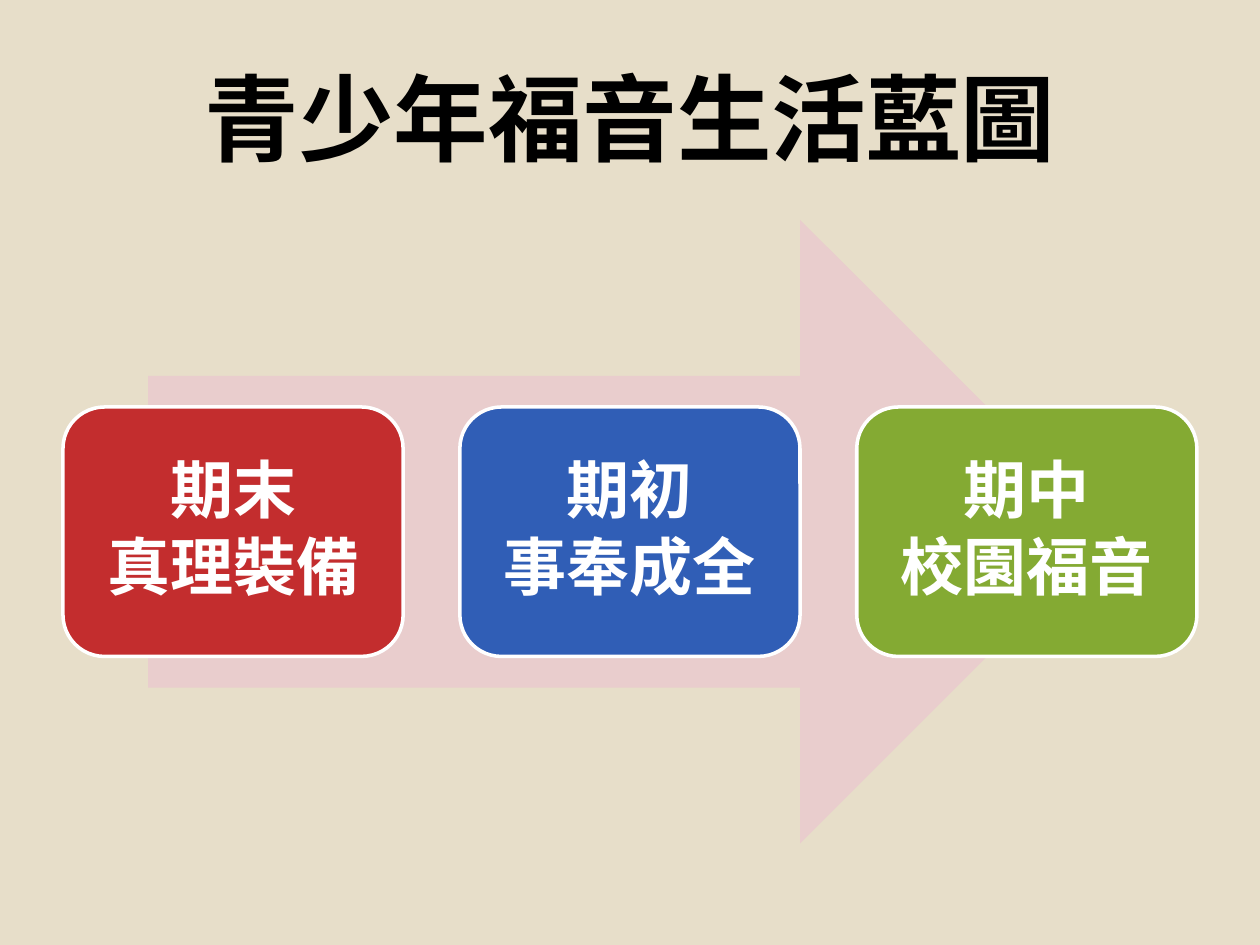
from pptx import Presentation
from pptx.dml.color import RGBColor
from pptx.enum.shapes import MSO_SHAPE
from pptx.enum.text import MSO_ANCHOR, PP_ALIGN
from pptx.oxml.ns import qn
from pptx.util import Inches, Pt
from lxml import etree

ARROW = MSO_SHAPE.RIGHT_ARROW
ROUNDED = MSO_SHAPE.ROUNDED_RECTANGLE
MIDDLE = MSO_ANCHOR.MIDDLE
CENTER = PP_ALIGN.CENTER

FONT = "Noto Sans CJK SC"
COLORS = {
    "background": "E7DEC9",
    "title": "000000",
    "arrow": "E9CDCD",
    "white": "FFFFFF",
    "red": "C32D2E",
    "blue": "305EB6",
    "green": "84AA33",
}
WIDTH, HEIGHT = 10, 7.5
MARGIN = 0.05 * WIDTH
CONTENT_WIDTH = WIDTH - 2 * MARGIN
STAGE_WIDTH = 0.3 * CONTENT_WIDTH
STAGE_HEIGHT = 1.98
ARROW_WIDTH = 0.85 * CONTENT_WIDTH
ARROW_HEIGHT = 0.66 * HEIGHT
MIDDLE_Y = 4.22
INSET = 0.15

STAGES = [
    ("red", ("期末", "真理裝備")),
    ("blue", ("期初", "事奉成全")),
    ("green", ("期中", "校園福音")),
]


def color(name):
    return RGBColor.from_string(COLORS[name])


def add_span(para, text, size, color_name):
    para.alignment = CENTER
    span = para.add_run()
    span.text = text
    span.font.name = FONT
    span.font.size = Pt(size)
    span.font.bold = True
    span.font.color.rgb = color(color_name)
    east_asian = etree.SubElement(span.font._element, qn("a:ea"))
    east_asian.set("typeface", FONT)


def add_title(page, text):
    title = page.shapes.title
    title.left, title.top = Inches(MARGIN), Inches(0.3)
    title.width, title.height = Inches(CONTENT_WIDTH), Inches(1.25)
    title.text_frame.vertical_anchor = MIDDLE
    add_span(title.text_frame.paragraphs[0], text, 54, "title")


def add_centered_shape(page, kind, center_x, width, height, fill):
    shape = page.shapes.add_shape(
        kind,
        Inches(center_x - width / 2),
        Inches(MIDDLE_Y - height / 2),
        Inches(width),
        Inches(height),
    )
    shape.shadow.inherit = False
    shape.fill.solid()
    shape.fill.fore_color.rgb = color(fill)
    shape.line.fill.background()
    return shape


def add_stage(page, center_x, fill, lines):
    box = add_centered_shape(page, ROUNDED, center_x, STAGE_WIDTH, STAGE_HEIGHT, fill)
    box.line.color.rgb = color("white")
    box.line.width = Pt(2)
    frame = box.text_frame
    frame.word_wrap = True
    frame.vertical_anchor = MIDDLE
    frame.margin_left = frame.margin_right = Inches(INSET)
    frame.margin_top = frame.margin_bottom = Inches(INSET)
    for index, line in enumerate(lines):
        para = frame.add_paragraph() if index else frame.paragraphs[0]
        para.line_spacing = 0.9
        para.space_after = Pt(5)
        add_span(para, line, 36, "white")


def main():
    deck = Presentation()
    deck.slide_width, deck.slide_height = Inches(WIDTH), Inches(HEIGHT)
    page = deck.slides.add_slide(deck.slide_layouts[5])
    page.background.fill.solid()
    page.background.fill.fore_color.rgb = color("background")

    add_title(page, "青少年福音生活藍圖")
    add_centered_shape(page, ARROW, WIDTH / 2, ARROW_WIDTH, ARROW_HEIGHT, "arrow")
    step = (CONTENT_WIDTH - STAGE_WIDTH) / (len(STAGES) - 1)
    for column, (fill, lines) in enumerate(STAGES):
        add_stage(page, MARGIN + STAGE_WIDTH / 2 + column * step, fill, lines)

    deck.save("out.pptx")


if __name__ == "__main__":
    main()
